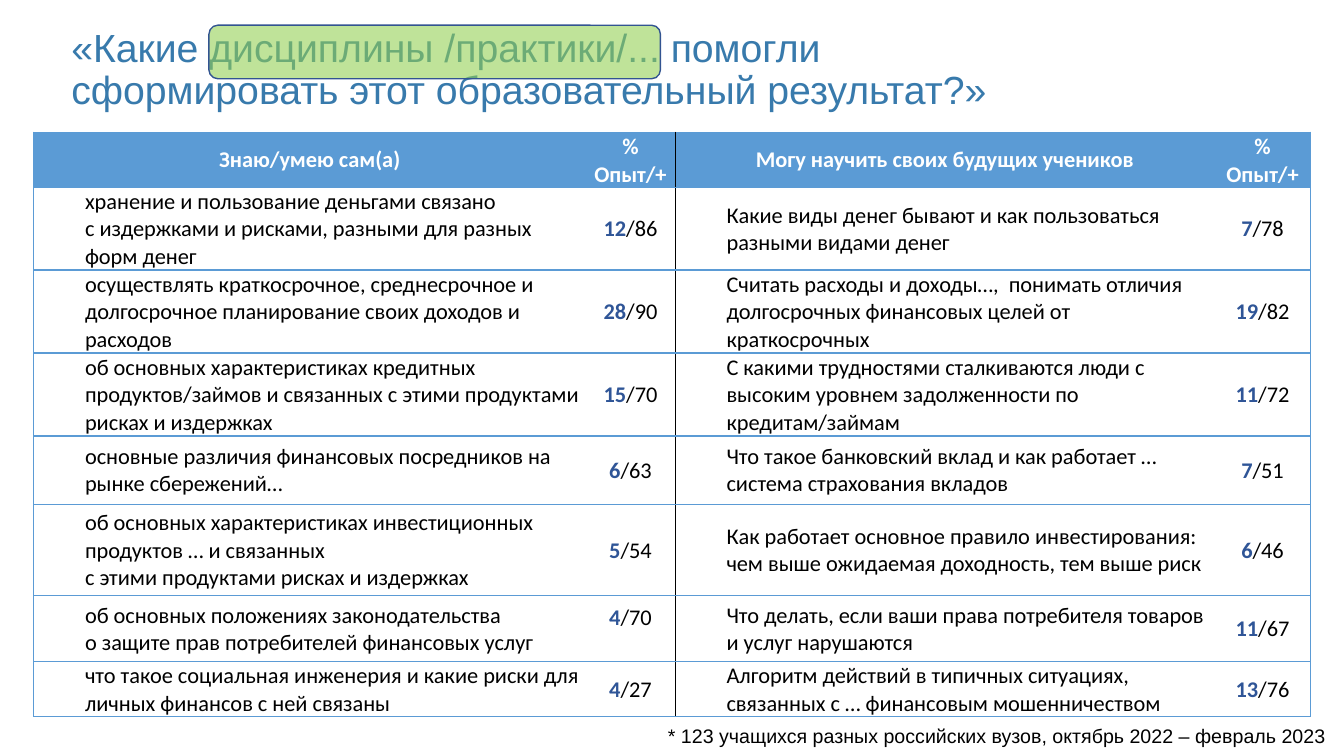
from dataclasses import dataclass
from typing import Any, NamedTuple

from lxml import etree
from pptx import Presentation
from pptx.dml.color import RGBColor
from pptx.enum.shapes import MSO_SHAPE
from pptx.enum.text import MSO_ANCHOR, PP_ALIGN
from pptx.oxml.ns import qn
from pptx.util import Emu, Pt

LEFT, CENTER, RIGHT = PP_ALIGN.LEFT, PP_ALIGN.CENTER, PP_ALIGN.RIGHT
TOP, MIDDLE, BOTTOM = MSO_ANCHOR.TOP, MSO_ANCHOR.MIDDLE, MSO_ANCHOR.BOTTOM
ROUNDED = MSO_SHAPE.ROUNDED_RECTANGLE
EMU_PER_PX = 9525


@dataclass(frozen=True)
class Theme:
    title: str = "387AAC"
    accent: str = "5B9BD5"
    experience: str = "2F5597"
    highlight: str = "92D050"
    highlight_line: str = "325491"
    ink: str = "000000"
    paper: str = "FFFFFF"
    title_size: int = 28
    table_size: int = 16
    note_size: int = 14
    heading_font: str = "Arial"
    table_font: str = "Calibri"


class Box(NamedTuple):
    left: int
    top: int
    width: int
    height: int


class Share(NamedTuple):
    experience: int
    plus: int
    lift: int = 0


class Topic(NamedTuple):
    height: int
    know: str
    know_share: Share
    teach: str
    teach_share: Share


THEME = Theme()
HEADER_HEIGHT = 52
COLUMN_WIDTHS = (526, 85, 514, 91)
SHARE_HEADER = "%\nОпыт/+"
HEADERS = ("Знаю/умею сам(а)", SHARE_HEADER, "Могу научить своих будущих учеников", SHARE_HEADER)
COLUMN_BORDERS = (
    {"L": THEME.accent},
    {"R": THEME.ink},
    {"L": THEME.ink},
    {"R": THEME.accent},
)
TOPICS = (
    Topic(79, "хранение и пользование деньгами связано\nс издержками и рисками, разными для разных форм денег",
          Share(12, 86), "Какие виды денег бывают и как пользоваться разными видами денег", Share(7, 78)),
    Topic(79, "осуществлять краткосрочное, среднесрочное и долгосрочное планирование своих доходов и расходов",
          Share(28, 90),
          "Считать расходы и доходы…,  понимать отличия долгосрочных финансовых целей от краткосрочных",
          Share(19, 82)),
    Topic(79, "об основных характеристиках кредитных продуктов/займов и связанных с этими продуктами "
          "рисках и издержках", Share(15, 70),
          "С какими трудностями сталкиваются люди с высоким уровнем задолженности по кредитам/займам",
          Share(11, 72)),
    Topic(65, "основные различия финансовых посредников на рынке сбережений…", Share(6, 63),
          "Что такое банковский вклад и как работает …система страхования вкладов", Share(7, 51)),
    Topic(87, "об основных характеристиках инвестиционных продуктов … и связанных\n"
          "с этими продуктами рисках и издержках", Share(5, 54),
          "Как работает основное правило инвестирования: чем выше ожидаемая доходность, тем выше риск",
          Share(6, 46)),
    Topic(63, "об основных положениях законодательства\nо защите прав потребителей финансовых услуг",
          Share(4, 70, lift=22), "Что делать, если ваши права потребителя товаров и услуг нарушаются",
          Share(11, 67)),
    Topic(52, "что такое социальная инженерия и какие риски для личных финансов с ней связаны",
          Share(4, 27), "Алгоритм действий в типичных ситуациях, связанных с … финансовым мошенничеством",
          Share(13, 76)),
)


def px(length: int) -> Emu:
    return Emu(length * EMU_PER_PX)


def place(box: Box) -> tuple[Emu, ...]:
    return tuple(px(length) for length in box)


def write(paragraph: Any, text: str, *, size: int, font: str, color: str,
          bold: bool = False, align: Any = LEFT) -> None:
    """Append text to the paragraph; each newline becomes a line break."""
    paragraph.alignment = align
    for index, line in enumerate(text.split("\n")):
        if index:
            paragraph.add_line_break()
        run = paragraph.add_run()
        run.text = line
        run.font.size = Pt(size)
        run.font.name = font
        run.font.bold = bold
        run.font.color.rgb = RGBColor.from_string(color)


def write_cell(cell: Any, text: str, color: str, *, bold: bool = False, align: Any = CENTER) -> None:
    write(cell.text_frame.paragraphs[0], text, size=THEME.table_size, font=THEME.table_font,
          color=color, bold=bold, align=align)


def write_topic(cell: Any, text: str) -> None:
    paragraph = cell.text_frame.paragraphs[0]
    paragraph.level = 1
    properties = paragraph._p.get_or_add_pPr()
    properties.set("marL", str(px(48)))
    properties.set("indent", "0")
    write_cell(cell, text, THEME.ink, align=LEFT)


def write_share(cell: Any, share: Share) -> None:
    write_cell(cell, str(share.experience), THEME.experience, bold=True)
    write_cell(cell, f"/{share.plus}", THEME.ink)
    cell.margin_bottom = px(share.lift)


def style_cell(cell: Any, fill: str, side_borders: dict[str, str]) -> None:
    borders = {"T": THEME.accent, "B": THEME.accent} | side_borders
    properties = cell._tc.get_or_add_tcPr()
    for side in "LRTB":
        line = etree.SubElement(properties, qn(f"a:ln{side}"), w=str(Pt(1)))
        if side in borders:
            solid = etree.SubElement(line, qn("a:solidFill"))
            etree.SubElement(solid, qn("a:srgbClr"), val=borders[side])
        else:
            etree.SubElement(line, qn("a:noFill"))
    cell.fill.solid()
    cell.fill.fore_color.rgb = RGBColor.from_string(fill)
    cell.vertical_anchor = MIDDLE
    cell.margin_left = cell.margin_top = cell.margin_right = px(1)
    cell.margin_bottom = 0


def add_topic_table(slide: Any, left: int, top: int) -> None:
    heights = (HEADER_HEIGHT, *(topic.height for topic in TOPICS))
    box = Box(left, top, sum(COLUMN_WIDTHS), sum(heights))
    table = slide.shapes.add_table(len(heights), len(COLUMN_WIDTHS), *place(box)).table
    table.horz_banding = False
    for column, width in zip(table.columns, COLUMN_WIDTHS):
        column.width = px(width)
    for index, (row, height) in enumerate(zip(table.rows, heights)):
        row.height = px(height)
        for cell, borders in zip(row.cells, COLUMN_BORDERS):
            style_cell(cell, THEME.paper if index else THEME.accent, borders)
    for column_index, header in enumerate(HEADERS):
        write_cell(table.cell(0, column_index), header, THEME.paper, bold=True)
    for row_index, topic in enumerate(TOPICS, start=1):
        write_topic(table.cell(row_index, 0), topic.know)
        write_share(table.cell(row_index, 1), topic.know_share)
        write_topic(table.cell(row_index, 2), topic.teach)
        write_share(table.cell(row_index, 3), topic.teach_share)


def add_text(slide: Any, box: Box, text: str, *, size: int, color: str, align: Any = LEFT,
             anchor: Any = TOP, inset: tuple[int, int] = (0, 0), spacing: float = 1.0) -> None:
    frame = slide.shapes.add_textbox(*place(box)).text_frame
    frame.word_wrap = True
    frame.vertical_anchor = anchor
    frame.margin_left = frame.margin_right = px(inset[0])
    frame.margin_top = frame.margin_bottom = px(inset[1])
    paragraph = frame.paragraphs[0]
    paragraph.line_spacing = spacing
    write(paragraph, text, size=size, font=THEME.heading_font, color=color, align=align)


def add_highlight(slide: Any, box: Box, opacity_percent: int) -> None:
    shape = slide.shapes.add_shape(ROUNDED, *place(box))
    shape.shadow.inherit = False
    shape.fill.solid()
    shape.fill.fore_color.rgb = RGBColor.from_string(THEME.highlight)
    color = shape._element.spPr.find(f"{qn('a:solidFill')}/{qn('a:srgbClr')}")
    etree.SubElement(color, qn("a:alpha"), val=str(opacity_percent * 1000))
    shape.line.color.rgb = RGBColor.from_string(THEME.highlight_line)
    shape.line.width = Pt(1)


def main() -> None:
    presentation = Presentation()
    presentation.slide_width, presentation.slide_height = px(1280), px(720)
    slide = presentation.slides.add_slide(presentation.slide_layouts[6])
    add_text(slide, Box(68, 16, 885, 92),
             "«Какие дисциплины /практики/... помогли сформировать этот образовательный результат?»",
             size=THEME.title_size, color=THEME.title, anchor=BOTTOM, spacing=0.9)
    add_topic_table(slide, left=32, top=126)
    add_text(slide, Box(555, 684, 718, 33),
             "* 123 учащихся разных российских вузов, октябрь 2022 – февраль 2023",
             size=THEME.note_size, color=THEME.ink, align=RIGHT, inset=(10, 5))
    add_highlight(slide, Box(199, 24, 430, 51), opacity_percent=58)
    presentation.save("out.pptx")


if __name__ == "__main__":
    main()
